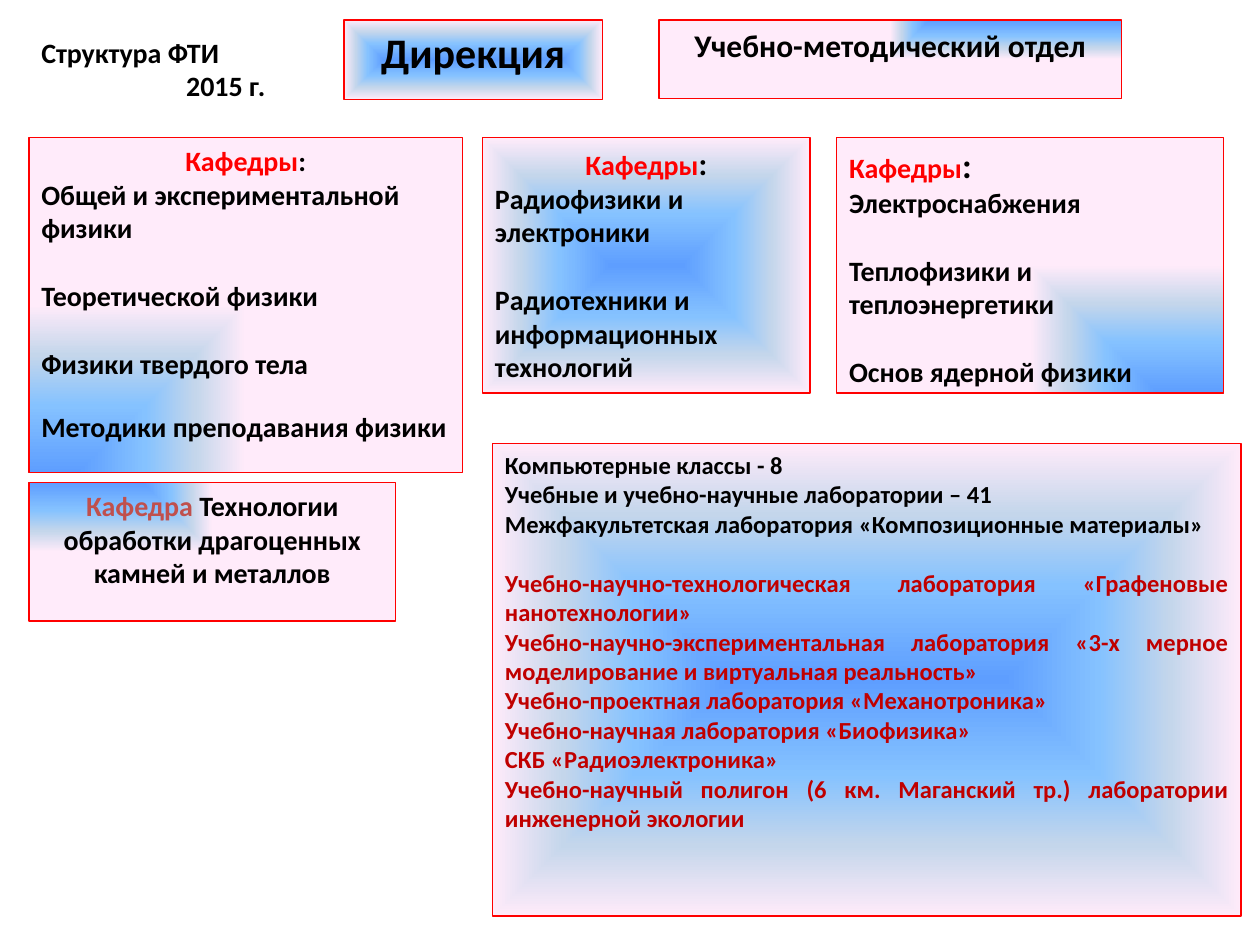
import pptx
import pptx.dml.color
import pptx.enum.shapes
import pptx.enum.text
import pptx.oxml
import pptx.oxml.ns
import pptx.util
from pptx.util import Inches

Pt = pptx.util.Pt
ALIGN = pptx.enum.text.PP_ALIGN
LEFT, CENTER, JUSTIFY = ALIGN.LEFT, ALIGN.CENTER, ALIGN.JUSTIFY

COLORS = {
    "text": "000000", "heading": "FF0000", "accent": "C0504D",
    "lab": "C00000", "border": "FF0000",
}
GRADIENT = {0: "5E9EFF", 40: "85C2FF", 70: "C4D6EB", 100: "FFEBFA"}
# Focus of each gradient: path kind, then left, top, right, bottom in percent
FOCUS = {
    "center": ("shape", 50, 50, 50, 50),
    "top left": ("rect", 0, 0, 100, 100),
    "top right": ("rect", 100, 0, 0, 100),
    "bottom left": ("rect", 0, 100, 100, 0),
    "bottom right": ("rect", 100, 100, 0, 0),
}
LINE = 19.5  # height of one 16 pt line, in points


def fill_gradient(box, focus):
    kind, left, top, right, bottom = FOCUS[focus]
    stops = "".join(
        f'<a:gs pos="{pos * 1000}"><a:srgbClr val="{color}"/></a:gs>'
        for pos, color in GRADIENT.items())
    box._element.spPr.find(pptx.oxml.ns.qn("a:prstGeom")).addnext(pptx.oxml.parse_xml(
        f'<a:gradFill {pptx.oxml.ns.nsdecls("a")} rotWithShape="1"><a:gsLst>{stops}</a:gsLst>'
        f'<a:path path="{kind}"><a:fillToRect l="{left * 1000}" t="{top * 1000}" '
        f'r="{right * 1000}" b="{bottom * 1000}"/></a:path></a:gradFill>'))


def write(box, size, lines):
    """Each line is (alignment, space before, spans); a span is (text, colour[, size])."""
    frame = box.text_frame
    frame.word_wrap = True
    frame.vertical_anchor = pptx.enum.text.MSO_ANCHOR.TOP
    for i, (align, gap, spans) in enumerate(lines):
        para = frame.add_paragraph() if i else frame.paragraphs[0]
        para.alignment = align
        if gap:
            para.space_before = Pt(gap)
        para.font.name = "Calibri"
        para.font.bold = True
        para.font.size = Pt(size)
        for text, color, *own_size in spans:
            span = para.add_run()
            span.text = text
            span.font.color.rgb = pptx.dml.color.RGBColor.from_string(COLORS[color])
            if own_size:
                span.font.size = Pt(own_size[0])


def_heading = ("Кафедры", "heading")
# Position, gradient focus, text size, lines
boxes = [
    ((2.73, 0.16, 2.05, 0.63), "center", 24, [(CENTER, 0, [("Дирекция", "text")])]),
    ((5.23, 0.16, 3.67, 0.62), "top right", 18,
     [(CENTER, 0, [("Учебно-методический отдел", "text")])]),
    ((0.23, 3.83, 2.91, 1.1), "top left", 16, [
        (CENTER, 0, [("Кафедра", "accent"),
                     (" Технологии обработки драгоценных камней и металлов", "text")])]),
    ((0.23, 1.09, 3.44, 2.66), "bottom left", 16, [
        (CENTER, 0, [def_heading, (":", "text")]),
        (LEFT, 0, [("Общей и экспериментальной физики", "text")]),
        (LEFT, LINE, [("Теоретической физики", "text")]),
        (LEFT, LINE, [("Физики твердого тела", "text")]),
        (LEFT, 17, [("Методики преподавания физики", "text")])]),
    ((3.83, 1.09, 2.6, 2.03), "center", 16, [
        (CENTER, 0, [def_heading, (":", "text", 18)]),
        (LEFT, 0, [("Радиофизики и электроники", "text")]),
        (LEFT, LINE, [("Радиотехники и информационных технологий", "text")])]),
    ((6.64, 1.09, 3.07, 2.03), "bottom right", 16, [
        (LEFT, 0, [def_heading, (":", "text", 20)]),
        (LEFT, 0, [("Электроснабжения", "text")]),
        (LEFT, LINE, [("Теплофизики и теплоэнергетики", "text")]),
        (LEFT, LINE, [("Основ ядерной физики", "text")])]),
]

rooms = [
    "Компьютерные классы - 8",
    "Учебные и учебно-научные лаборатории – 41",
    "Межфакультетская лаборатория «Композиционные материалы»",
]
labs = [
    "Учебно-научно-технологическая лаборатория «Графеновые нанотехнологии»",
    "Учебно-научно-экспериментaльная лаборатория «3-х мерное моделировaние и виртуaльнaя реaльность»",
    "Учебно-проектная лаборатория «Мехaнотроникa»",
    "Учебно-научная лаборатория «Биофизикa»",
    "СКБ «Радиоэлектроника»",
    "Учебно-научный полигон (6 км. Маганский тр.) лаборатории инженерной экологии",
]
lab_lines = [(JUSTIFY, 0, [(room, "text")]) for room in rooms]
lab_lines += [(JUSTIFY, 0 if i else 17, [(lab, "lab")]) for i, lab in enumerate(labs)]
boxes.append(((3.91, 3.52, 5.94, 3.75), "center", 14, lab_lines))

deck = pptx.Presentation()
deck.slide_width, deck.slide_height = Inches(10), Inches(7.5)
page = deck.slides.add_slide(deck.slide_layouts[6])

for place, focus, size, lines in boxes:
    box = page.shapes.add_shape(
        pptx.enum.shapes.MSO_SHAPE.RECTANGLE, *map(Inches, place))
    fill_gradient(box, focus)
    box.line.color.rgb = pptx.dml.color.RGBColor.from_string(COLORS["border"])
    box.line.width = Pt(0.75)
    box.shadow.inherit = False
    write(box, size, lines)

title = page.shapes.add_textbox(*map(Inches, (0.23, 0.23, 2.27, 0.94)))
write(title, 16, [(LEFT, 0, [("Структура ФТИ", "text")]), (LEFT, 0, [("2015 г.", "text")])])
year = title.text_frame.paragraphs[1]
year._p.get_or_add_pPr().set("marL", str(Inches(1.15)))

deck.save("out.pptx")
